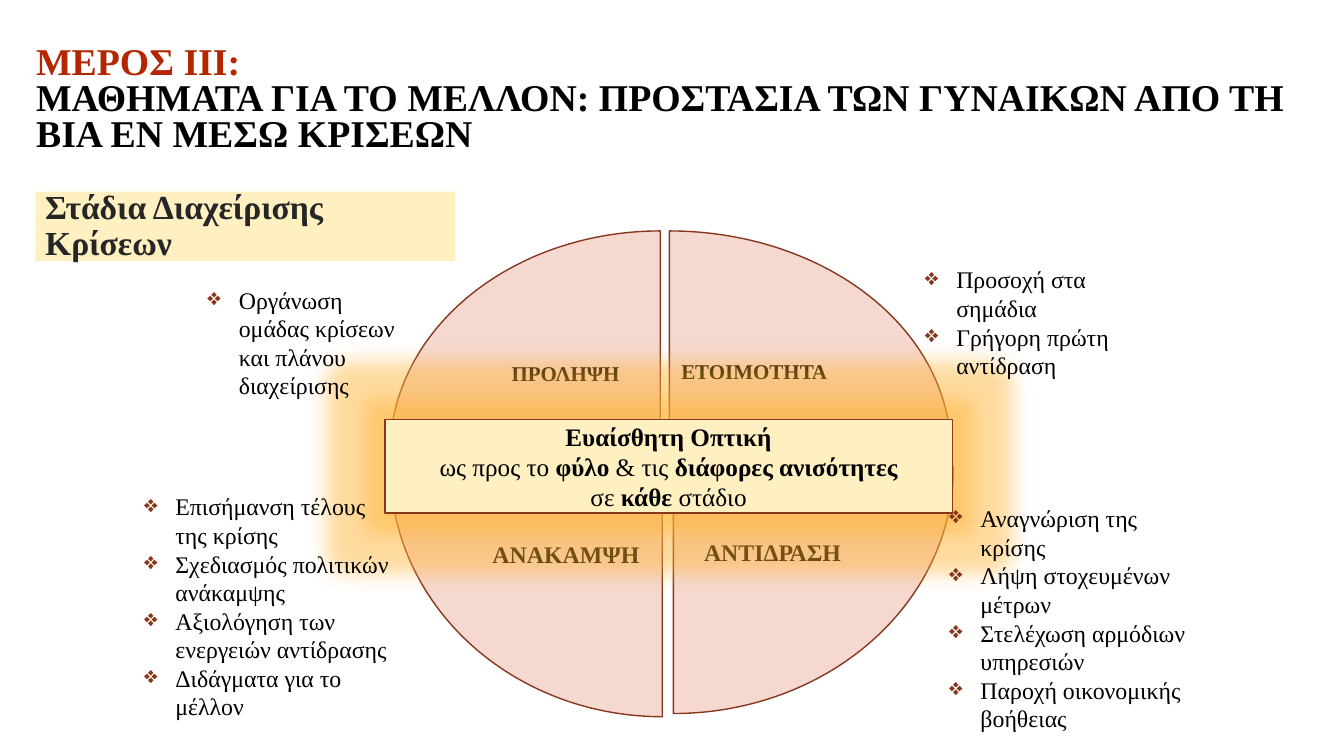
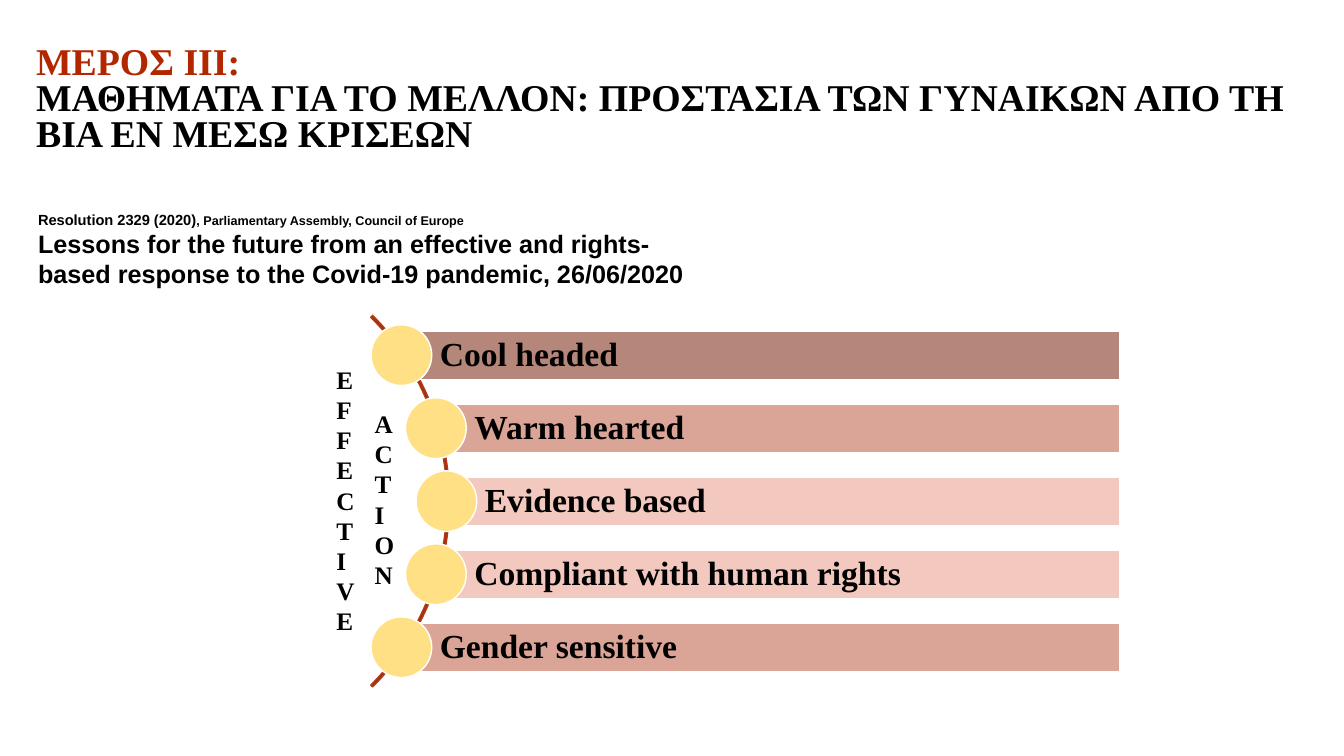
from dataclasses import dataclass
from math import sqrt
from typing import NamedTuple

from lxml.etree import SubElement
from pptx import Presentation
from pptx.dml.color import RGBColor
from pptx.enum.shapes import MSO_SHAPE
from pptx.enum.text import MSO_ANCHOR, PP_ALIGN
from pptx.oxml.ns import qn
from pptx.util import Cm, Pt


# Theme
@dataclass(frozen=True)
class Theme:
    serif: str = "Times New Roman"
    sans: str = "Arial"
    black: str = "000000"
    charcoal: str = "262626"
    red: str = "B22600"
    brown: str = "88371D"
    arc_line: str = "B93815"
    white: str = "FFFFFF"
    cream: str = "FFF0C2"
    yellow: str = "FFE085"
    pink: str = "F5D8CF"
    glow: str = "FFB12E"
    bar_dark: str = "B5877B"
    bar_medium: str = "DAA496"
    bar_light: str = "F3C8BE"
    title_size: float = 27
    heading_size: float = 24
    large_size: float = 18
    list_size: float = 17
    label_size: float = 15
    source_size: float = 10.5
    small_size: float = 9


THEME = Theme()


class Box(NamedTuple):
    """Left, top, width and height in centimetres."""
    left: float
    top: float
    width: float
    height: float


class Run(NamedTuple):
    text: str
    size: float
    bold: bool = False
    color: str = THEME.black
    font: str = THEME.serif


class Wedge(NamedTuple):
    box: Box
    rotation: int
    label: str
    label_box: Box
    size: float
    alignment: PP_ALIGN


class BulletList(NamedTuple):
    box: Box
    items: tuple[str, ...]


class Bar(NamedTuple):
    text: str
    color: str


class VerticalWord(NamedTuple):
    word: str
    box: Box


# Shared drawing functions
def write_text(shape, paragraphs, alignment=PP_ALIGN.LEFT, anchor=MSO_ANCHOR.TOP,
               line_spacing=1.0, insets=(0.25, 0.13, 0.25, 0.13), wrap=True) -> None:
    """Write lists of runs as paragraphs; insets are left, top, right, bottom."""
    frame = shape.text_frame
    frame.word_wrap = wrap
    frame.vertical_anchor = anchor
    (frame.margin_left, frame.margin_top,
     frame.margin_right, frame.margin_bottom) = map(Cm, insets)
    for index, runs in enumerate(paragraphs):
        paragraph = frame.add_paragraph() if index else frame.paragraphs[0]
        paragraph.alignment = alignment
        paragraph.line_spacing = line_spacing
        for item in runs:
            if item.text == "\n":
                paragraph.add_line_break()
                continue
            run = paragraph.add_run()
            run.text = item.text
            run.font.name = item.font
            run.font.size = Pt(item.size)
            run.font.bold = item.bold
            run.font.color.rgb = RGBColor.from_string(item.color)


def add_text(slide, box: Box, paragraphs, **options):
    shape = slide.shapes.add_textbox(*map(Cm, box))
    write_text(shape, paragraphs, **options)
    return shape


def add_shape(slide, kind: MSO_SHAPE, box: Box, fill: str, line: str | None = None):
    shape = slide.shapes.add_shape(kind, *map(Cm, box))
    shape.shadow.inherit = False
    shape.fill.solid()
    shape.fill.fore_color.rgb = RGBColor.from_string(fill)
    if line:
        shape.line.color.rgb = RGBColor.from_string(line)
        shape.line.width = Pt(1)
    else:
        shape.line.fill.background()
    return shape


def add_title(slide) -> None:
    size = THEME.title_size
    add_text(slide, Box(0.66, 0.86, 32.49, 3.35), [[
        Run("ΜΕΡΟΣ ΙΙI:", size, True, THEME.red),
        Run("\n", size),
        Run("ΜΑΘΗΜΑΤΑ ΓΙΑ ΤΟ ΜΕΛΛΟΝ: ΠΡΟΣΤΑΣΙΑ ΤΩΝ ΓΥΝΑΙΚΩΝ ΑΠΟ ΤΗ ΒΙΑ "
            "ΕΝ ΜΕΣΩ ΚΡΙΣΕΩΝ", size, True),
    ]], anchor=MSO_ANCHOR.MIDDLE, line_spacing=0.8)


# Crisis stages
WEDGES = (
    Wedge(Box(9.83, 5.82, 6.81, 5.59), 0, "ΠΡΟΛΗΨΗ",
          Box(11.84, 7.47, 4.83, 3.96), THEME.label_size, PP_ALIGN.CENTER),
    Wedge(Box(16.87, 5.82, 7.09, 5.54), 90, "ΕΤΟΙΜΟΤΗΤΑ",
          Box(16.87, 7.44, 5, 3.91), THEME.label_size, PP_ALIGN.LEFT),
    Wedge(Box(16.97, 11.76, 7.06, 6.22), 180, "ΑΝΤΙΔΡΑΣΗ",
          Box(16.97, 11.76, 5, 4.39), THEME.list_size, PP_ALIGN.CENTER),
    Wedge(Box(9.83, 11.76, 6.86, 6.3), 270, "ΑΝΑΚΑΜΨΗ",
          Box(11.84, 11.79, 4.85, 4.45), THEME.list_size, PP_ALIGN.CENTER),
)

BULLET_LISTS = (
    BulletList(Box(4.98, 7.06, 5.69, 2.44),
               ("Οργάνωση ομάδας κρίσεων και πλάνου διαχείρισης",)),
    BulletList(Box(23.06, 6.55, 5.69, 3.18),
               ("Προσοχή στα σημάδια", "Γρήγορη πρώτη αντίδραση")),
    BulletList(Box(23.67, 12.57, 6.71, 5.33),
               ("Αναγνώριση της κρίσης", "Λήψη στοχευμένων μέτρων",
                "Στελέχωση αρμόδιων υπηρεσιών", "Παροχή οικονομικής βοήθειας")),
    BulletList(Box(3.38, 12.27, 6.71, 6.07),
               ("Επισήμανση τέλους της κρίσης", "Σχεδιασμός πολιτικών ανάκαμψης",
                "Αξιολόγηση των ενεργειών αντίδρασης", "Διδάγματα για το μέλλον")),
)


def add_wedge(slide, wedge: Wedge) -> None:
    left, top, width, height = wedge.box
    box = wedge.box
    if wedge.rotation % 180:  # a quarter turn swaps width and height
        shift = (width - height) / 2
        box = Box(left + shift, top - shift, height, width)
    shape = add_shape(slide, MSO_SHAPE.PIE_WEDGE, box, THEME.pink, THEME.brown)
    shape.rotation = wedge.rotation
    add_text(slide, wedge.label_box, [[Run(wedge.label, wedge.size, True)]],
             alignment=wedge.alignment, anchor=MSO_ANCHOR.MIDDLE,
             line_spacing=0.9, insets=(0.3,) * 4)


def add_bullet_list(slide, bullet_list: BulletList) -> None:
    shape = add_text(slide, bullet_list.box,
                     [[Run(item, THEME.list_size)] for item in bullet_list.items])
    for paragraph in shape.text_frame.paragraphs:
        properties = paragraph._p.get_or_add_pPr()
        properties.set("marL", str(Cm(0.79)))
        properties.set("indent", str(-Cm(0.79)))
        color = SubElement(properties, qn("a:buClr"))
        SubElement(color, qn("a:srgbClr"), val=THEME.brown)
        SubElement(properties, qn("a:buChar"), char="❖")


def add_glow(shape, color: str, radius: float, opacity: int) -> None:
    effects = shape._element.spPr.find(qn("a:effectLst"))
    glow = SubElement(effects, qn("a:glow"), rad=str(Cm(radius)))
    tint = SubElement(glow, qn("a:srgbClr"), val=color)
    SubElement(tint, qn("a:alpha"), val=str(opacity * 1000))


def build_stages_slide(slide) -> None:
    for wedge in WEDGES:
        add_wedge(slide, wedge)
    add_title(slide)

    # Heading band
    heading = add_shape(slide, MSO_SHAPE.RECTANGLE, Box(0.89, 4.83, 10.59, 1.75),
                        THEME.cream)
    write_text(heading, [[Run("Στάδια Διαχείρισης Κρίσεων", THEME.heading_size,
                              True, THEME.charcoal)]],
               anchor=MSO_ANCHOR.MIDDLE, line_spacing=0.9)

    # Central message
    size = THEME.large_size
    message = add_shape(slide, MSO_SHAPE.RECTANGLE, Box(9.7, 10.57, 14.3, 2.36),
                        THEME.cream, THEME.brown)
    add_glow(message, THEME.glow, 1, 45)
    write_text(message, [
        [Run("Ευαίσθητη Οπτική", size, True)],
        [Run("ως προς το ", size), Run("φύλο", size, True),
         Run(" & τις ", size), Run("διάφορες ανισότητες", size, True)],
        [Run("σε ", size), Run("κάθε ", size, True), Run("στάδιο", size)],
    ], alignment=PP_ALIGN.CENTER, anchor=MSO_ANCHOR.MIDDLE)

    for bullet_list in BULLET_LISTS:
        add_bullet_list(slide, bullet_list)


# Effective action
BARS = (
    Bar("Cool headed", THEME.bar_dark),
    Bar("Warm hearted", THEME.bar_medium),
    Bar("Evidence based", THEME.bar_light),
    Bar("Compliant with human rights", THEME.bar_light),
    Bar("Gender sensitive", THEME.bar_medium),
)

VERTICAL_WORDS = (
    VerticalWord("EFFECTIVE", Box(8.23, 9.04, 0.97, 7.19)),
    VerticalWord("ACTION", Box(9.19, 10.16, 1.07, 4.88)),
)

ARC_CENTER_X, ARC_CENTER_Y = 4.71, 12.63
ARC_RADIUS, DOT_ORBIT = 6.62, 6.54
BAR_PITCH, BAR_HEIGHT, BAR_RIGHT = 1.84, 1.22, 28.23
DOT_SIZE = 1.53


def add_bars(slide) -> None:
    """Start each bar at a dot centred on the arc."""
    for index, bar in enumerate(BARS):
        offset = (index - (len(BARS) - 1) / 2) * BAR_PITCH
        center_x = ARC_CENTER_X + sqrt(DOT_ORBIT ** 2 - offset ** 2)
        center_y = ARC_CENTER_Y + offset
        shape = add_shape(slide, MSO_SHAPE.RECTANGLE,
                          Box(center_x, center_y - BAR_HEIGHT / 2,
                              BAR_RIGHT - center_x, BAR_HEIGHT),
                          bar.color, THEME.white)
        write_text(shape, [[Run(bar.text, THEME.heading_size, True)]],
                   anchor=MSO_ANCHOR.MIDDLE, line_spacing=0.9,
                   insets=(0.97, 0.18, 0.18, 0.18))
        add_shape(slide, MSO_SHAPE.OVAL,
                  Box(center_x - DOT_SIZE / 2, center_y - DOT_SIZE / 2,
                      DOT_SIZE, DOT_SIZE), THEME.yellow, THEME.white)


def build_action_slide(slide) -> None:
    add_title(slide)

    # Source of the lessons
    add_text(slide, Box(0.71, 5.18, 16.94, 2.26), [
        [Run("Resolution 2329 (2020)", THEME.source_size, True, font=THEME.sans),
         Run(", Parliamentary Assembly, Council of Europe", THEME.small_size, True,
             font=THEME.sans)],
        [Run("Lessons for the future from an effective and rights-based response "
             "to the Covid-19 pandemic, 26/06/2020", THEME.large_size, True,
             font=THEME.sans)],
    ])

    # Arc with its bars
    arc = add_shape(slide, MSO_SHAPE.BLOCK_ARC,
                    Box(ARC_CENTER_X - ARC_RADIUS, ARC_CENTER_Y - ARC_RADIUS,
                        2 * ARC_RADIUS, 2 * ARC_RADIUS), THEME.brown, THEME.arc_line)
    for index, value in enumerate((189, 27, 0.005)):
        arc.adjustments[index] = value
    add_bars(slide)

    # Words set letter under letter
    for word, box in VERTICAL_WORDS:
        add_text(slide, box, [[Run(letter, THEME.large_size, True)] for letter in word],
                 wrap=False)


def main() -> None:
    presentation = Presentation()
    presentation.slide_width, presentation.slide_height = Cm(33.87), Cm(19.05)
    blank = presentation.slide_layouts[6]
    for build in (build_stages_slide, build_action_slide):
        build(presentation.slides.add_slide(blank))
    presentation.save("out.pptx")


if __name__ == "__main__":
    main()
